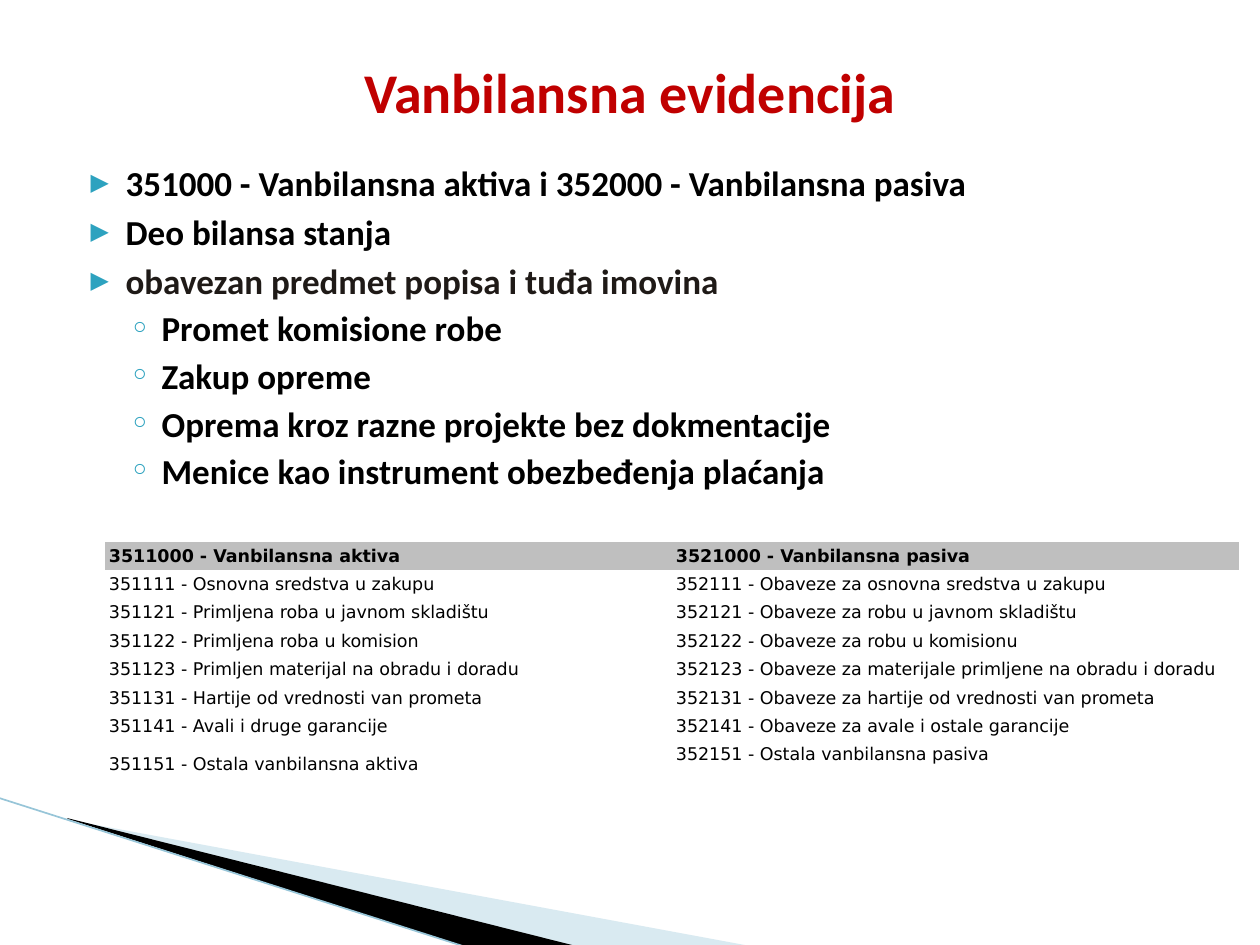
from lxml import etree
from pptx import Presentation
from pptx.dml.color import RGBColor
from pptx.enum.text import MSO_ANCHOR, MSO_AUTO_SIZE, PP_ALIGN
from pptx.oxml.ns import qn
from pptx.util import Emu, Pt

TOP, MIDDLE = MSO_ANCHOR.TOP, MSO_ANCHOR.MIDDLE
CENTER = PP_ALIGN.CENTER
NO_FIT = MSO_AUTO_SIZE.NONE
PX = 914400 / 126
NO_STYLE = "{2D5ABB26-0587-4C30-8999-92F81FD0307C}"

TITLE_FONT = {"name": "Calibri", "size": Pt(32), "bold": True}
LIST_FONT = {"name": "Calibri", "size": Pt(20), "bold": True}
TABLE_FONT = {"name": "DejaVu Sans", "size": Pt(10)}

# Per list level: indents in px, space before in points, bullet and its size
LEVELS = [
    {"left": 50, "hang": 35, "before": 4, "mark": "▶", "percent": 68},
    {"left": 86, "hang": 32, "before": 3.2, "mark": "◦", "percent": 100},
]
ITEMS = [
    (0, "351000 - Vanbilansna aktiva i 352000 - Vanbilansna pasiva", "000000"),
    (0, "Deo bilansa stanja", "000000"),
    (0, "obavezan predmet popisa i tuđa imovina", "1F1A17"),
    (1, "Promet komisione robe", "000000"),
    (1, "Zakup opreme", "000000"),
    (1, "Oprema kroz razne projekte bez dokmentacije", "000000"),
    (1, "Menice kao instrument obezbeđenja plaćanja", "000000"),
]
ACCOUNTS = [
    ("3511000 - Vanbilansna aktiva", "3521000 - Vanbilansna pasiva"),
    ("351111 - Osnovna sredstva u zakupu",
     "352111 - Obaveze za osnovna sredstva u zakupu"),
    ("351121 - Primljena roba u javnom skladištu",
     "352121 - Obaveze za robu u javnom skladištu"),
    ("351122 - Primljena roba u komision",
     "352122 - Obaveze za robu u komisionu"),
    ("351123 - Primljen materijal na obradu i doradu",
     "352123 - Obaveze za materijale primljene na obradu i doradu"),
    ("351131 - Hartije od vrednosti van prometa",
     "352131 - Obaveze za hartije od vrednosti van prometa"),
    ("351141 - Avali i druge garancije",
     "352141 - Obaveze za avale i ostale garancije"),
    ("351151 - Ostala vanbilansna aktiva",
     "352151 - Ostala vanbilansna pasiva"),
]


def px(length):
    return Emu(round(length * PX))


def color(value):
    return RGBColor.from_string(value)


def apply(target, values):
    for name, value in values.items():
        setattr(target, name, value)


def place(shape, box):
    apply(shape, dict(zip(("left", "top", "width", "height"), map(px, box))))


def style_font(font, values, tint):
    apply(font, values)
    font.color.rgb = color(tint)


def add_bullet(para, level):
    props = para._p.get_or_add_pPr()
    props.set("marL", str(px(level["left"])))
    props.set("indent", str(-px(level["hang"])))
    tint = etree.SubElement(props, qn("a:buClr"))
    etree.SubElement(tint, qn("a:srgbClr"), val="2DA2BF")
    etree.SubElement(props, qn("a:buSzPct"), val=str(level["percent"] * 1000))
    etree.SubElement(props, qn("a:buFont"), typeface="DejaVu Sans")
    etree.SubElement(props, qn("a:buChar"), char=level["mark"])


def add_wedge(page, points, fill, alpha=100):
    builder = page.shapes.build_freeform(*points[0], scale=PX)
    builder.add_line_segments(points[1:], close=True)
    wedge = builder.convert_to_shape()
    wedge.shadow.inherit = False
    wedge.fill.solid()
    wedge.fill.fore_color.rgb = color(fill)
    wedge.line.fill.background()
    if alpha < 100:
        tint = wedge._element.spPr.find(".//" + qn("a:srgbClr"))
        etree.SubElement(tint, qn("a:alpha"), val=str(alpha * 1000))
    return wedge


def build_corner(page, box):
    left, top, width, height = box
    bottom = top + height

    def at(x, y):
        return left + x, top + y

    pale = add_wedge(page, [at(70, 22), (left + 751, bottom - 2),
                            (left + 576, bottom - 2), at(70, 21)], "A0CBDC", 40)
    dark = add_wedge(page, [at(68, 20), (left + 577, bottom - 2),
                            (left + 470, bottom), at(69, 21)], "000000")
    edge = page.shapes.add_connector(1, px(left), px(top),
                                     px(left + 470), px(bottom))
    edge.line.color.rgb = color("97C5D8")
    edge.line.width = Pt(0.95)
    etree.SubElement(edge._element.spPr, qn("a:effectLst"))
    # Send the decoration behind the placeholders
    tree = page.shapes._spTree
    for index, shape in enumerate((pale, dark, edge)):
        tree.insert(2 + index, shape._element)


def build_title(page, box):
    title = page.shapes.title
    place(title, box)
    frame = title.text_frame
    frame.text = "Vanbilansna evidencija"
    apply(frame, {"auto_size": NO_FIT, "vertical_anchor": MIDDLE})
    para = frame.paragraphs[0]
    para.alignment = CENTER
    style_font(para.runs[0].font, TITLE_FONT, "C00000")


def build_list(page, box):
    body = page.placeholders[1]
    place(body, box)
    frame = body.text_frame
    apply(frame, {"auto_size": NO_FIT, "vertical_anchor": TOP})
    for index, (depth, text, tint) in enumerate(ITEMS):
        para = frame.add_paragraph() if index else frame.paragraphs[0]
        level = LEVELS[depth]
        add_bullet(para, level)
        para.level = depth
        para.space_before = Pt(level["before"] if index else 0)
        span = para.add_run()
        span.text = text
        style_font(span.font, LIST_FONT, tint)


def build_accounts(page, box):
    shape = page.shapes.add_table(len(ACCOUNTS), 2, *map(px, box))
    table = shape.table
    apply(table, {"first_row": False, "horz_banding": False})
    table._tbl.tblPr.find(qn("a:tableStyleId")).text = NO_STYLE
    row_height = 28
    last = len(ACCOUNTS) - 1
    margins = dict.fromkeys(("margin_left", "margin_top",
                             "margin_right", "margin_bottom"), px(4))
    for row, texts in enumerate(ACCOUNTS):
        # The last row takes what remains of the box
        table.rows[row].height = px(
            box[3] - last * row_height if row == last else row_height)
        for column, text in enumerate(texts):
            cell = table.cell(row, column)
            apply(cell, margins)
            cell.vertical_anchor = TOP if (row, column) == (last, 1) else MIDDLE
            cell.text = text
            font = cell.text_frame.paragraphs[0].runs[0].font
            style_font(font, TABLE_FONT, "000000")
            font.bold = row == 0
            if row == 0:
                cell.fill.solid()
                cell.fill.fore_color.rgb = color("BFBFBF")
            else:
                cell.fill.background()


def main():
    deck = Presentation()
    apply(deck, {"slide_width": px(1260), "slide_height": px(945)})
    page = deck.slides.add_slide(deck.slide_layouts[1])
    build_corner(page, (-1, 798, 751, 150))
    build_title(page, (63, 38, 1134, 107))
    build_list(page, (63, 155, 1134, 725))
    build_accounts(page, (105, 542, 1134, 244))
    deck.save("out.pptx")


if __name__ == "__main__":
    main()
